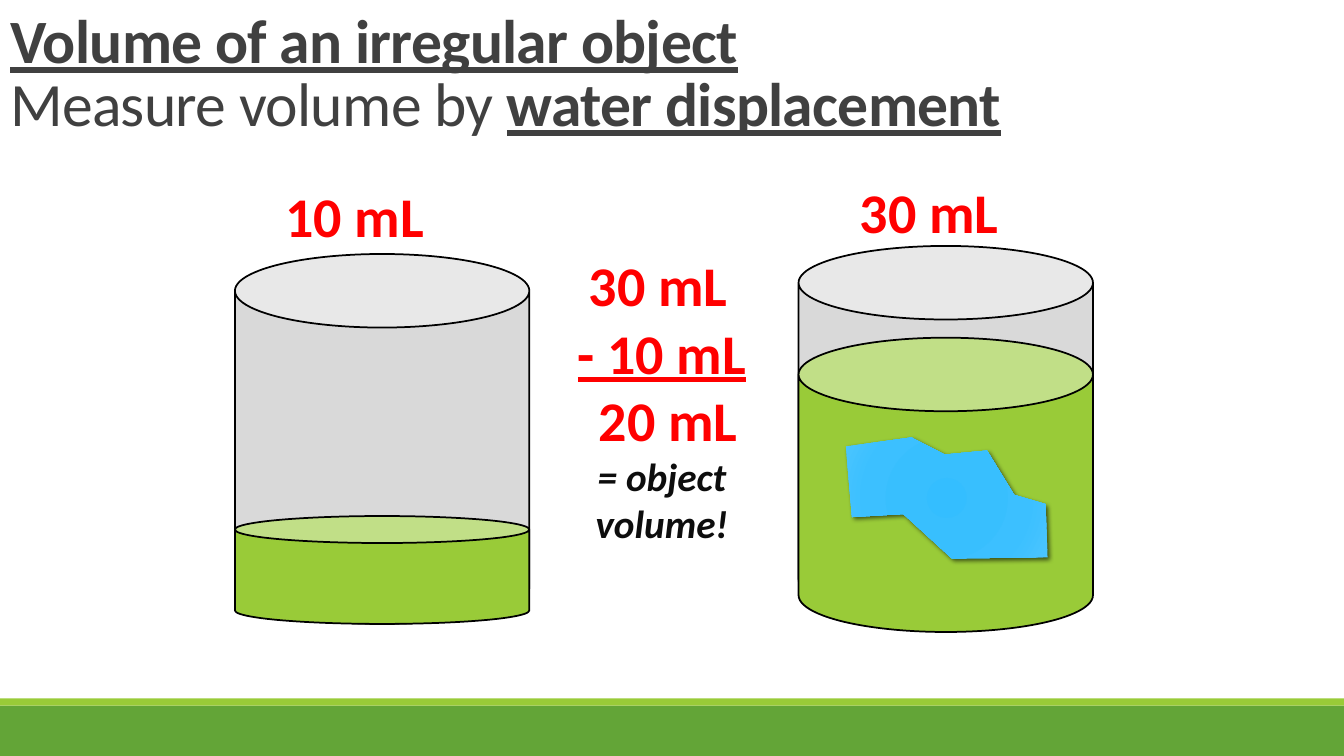
"""Build a slide that explains volume measurement by water displacement."""
from lxml import etree
from pptx import Presentation
from pptx import util as u
from pptx.dml.color import RGBColor
from pptx.enum import shapes, text

COLORS = {"band": "63A537", "water": "99CB38", "glass": "D9D9D9", "title": "404040",
          "volume": "FF0000", "result": "0D0D0D", "outline": "000000"}
FONT = "Calibri"
TITLE_LINES = [[("Volume of an irregular object", True)],
               [("Measure volume by ", False), ("water displacement", True)]]
BANDS = [("band", 7, 0.5), ("water", 6.93, 0.07)]
CYLINDER_WIDTH = 2.92
CYLINDERS = [
    {"left": 2.33, "glass": (2.52, 3.67), "water": (5.12, 1.07)},
    {"left": 7.92, "glass": (2.44, 3.67), "water": (3.35, 2.92)},
]
LEFT, CENTER = text.PP_ALIGN.LEFT, text.PP_ALIGN.CENTER
VOLUME = {"size": 40, "color": "volume"}
TEXT_BOXES = [
    ((2.73, 1.75, 1.79, 0.77), [("10 mL", LEFT, 0, VOLUME)]),
    ((8.43, 1.71, 1.97, 0.77), [("30 mL", LEFT, 0, VOLUME)]),
    ((5.49, 2.44, 2.15, 3.06), [
        ("30 mL", LEFT, 0.25, VOLUME),
        ("- 10 mL", CENTER, 0, {**VOLUME, "underline": True}),
        ("20 mL", CENTER, 0.12, VOLUME),
        ("= object volume!", CENTER, 0, {"size": 28, "color": "result", "italic": True}),
    ]),
]
OBJECT_POINTS = [(839, 443), (845, 513), (896, 510), (944, 554), (1039, 553),
                 (1037, 500), (1006, 491), (979, 447), (937, 451), (904, 434)]
OBJECT_STOPS = [(0, "34BEFF"), (34, "38BFFE"), (70, "3CC0FF"), (100, "4BC5FF")]
DRAWING_NS = "http://schemas.openxmlformats.org/drawingml/2006/main"


def color(name):
    return RGBColor.from_string(COLORS[name])


def format_run(run, size, color_name, bold=True, underline=False, italic=False):
    font = run.font
    font.name, font.size = FONT, u.Pt(size)
    font.bold, font.underline, font.italic = bold, underline, italic
    font.color.rgb = color(color_name)


def add_filled(slide, kind, box, fill, outlined=False):
    shape = slide.shapes.add_shape(kind, *map(u.Inches, box))
    shape.shadow.inherit = False
    shape.fill.solid()
    shape.fill.fore_color.rgb = color(fill)
    if outlined:
        shape.line.color.rgb = color("outline")
        shape.line.width = u.Pt(1.25)
    else:
        shape.line.fill.background()


def fill_title(title):
    title.left, title.top, title.width, title.height = map(u.Inches, (0, 0.02, 10.25, 1.41))
    frame = title.text_frame
    frame.word_wrap = True
    frame.auto_size = text.MSO_AUTO_SIZE.NONE
    frame.vertical_anchor = text.MSO_ANCHOR.BOTTOM
    paragraph = frame.paragraphs[0]
    paragraph.alignment, paragraph.line_spacing = LEFT, 0.85
    for index, line in enumerate(TITLE_LINES):
        if index:
            paragraph.add_line_break()
        for words, strong in line:
            run = paragraph.add_run()
            run.text = words
            format_run(run, 44, "title", bold=strong, underline=strong)
            run._r.get_or_add_rPr().set("spc", "-50")


def add_text_box(slide, box, lines):
    frame = slide.shapes.add_textbox(*map(u.Inches, box)).text_frame
    frame.word_wrap = True
    frame.text = "\n".join(line[0] for line in lines)
    for paragraph, (_, alignment, indent, style) in zip(frame.paragraphs, lines):
        paragraph.alignment = alignment
        if indent:
            paragraph._p.get_or_add_pPr().set("marL", str(u.Inches(indent)))
        format_run(paragraph.runs[0], style["size"], style["color"],
                   underline=style.get("underline", False), italic=style.get("italic", False))


def add_object(slide):
    builder = slide.shapes.build_freeform(*OBJECT_POINTS[0], scale=u.Inches(0.01))
    builder.add_line_segments(OBJECT_POINTS[1:], close=True)
    shape = builder.convert_to_shape()
    shape.line.fill.background()
    stops = "".join(f'<a:gs pos="{position * 1000}"><a:srgbClr val="{value}"/></a:gs>'
                    for position, value in OBJECT_STOPS)
    gradient = (f'<a:gradFill xmlns:a="{DRAWING_NS}"><a:gsLst>{stops}</a:gsLst>'
                '<a:path path="circle"><a:fillToRect l="100000" t="100000" r="100000" '
                'b="100000"/></a:path></a:gradFill>')
    shadow = (f'<a:effectLst xmlns:a="{DRAWING_NS}"><a:outerShdw blurRad="{u.Pt(3.5)}" '
              f'dist="{u.Pt(2)}" dir="2700000"><a:srgbClr val="{COLORS["outline"]}">'
              '<a:alpha val="60000"/></a:srgbClr></a:outerShdw></a:effectLst>')
    properties = shape._element.spPr
    properties.find(f"{{{DRAWING_NS}}}ln").addprevious(etree.fromstring(gradient))
    properties.append(etree.fromstring(shadow))


def main():
    presentation = Presentation()
    presentation.slide_width, presentation.slide_height = u.Inches(13.33), u.Inches(7.5)
    slide = presentation.slides.add_slide(presentation.slide_layouts[5])
    fill_title(slide.shapes.title)
    for fill, top, height in BANDS:
        add_filled(slide, shapes.MSO_SHAPE.RECTANGLE, (0, top, 13.33, height), fill)
    for cylinder in CYLINDERS:
        for part in ("glass", "water"):
            top, height = cylinder[part]
            add_filled(slide, shapes.MSO_SHAPE.CAN,
                       (cylinder["left"], top, CYLINDER_WIDTH, height), part, outlined=True)
    for box, lines in TEXT_BOXES:
        add_text_box(slide, box, lines)
    add_object(slide)
    presentation.save("out.pptx")


if __name__ == "__main__":
    main()
